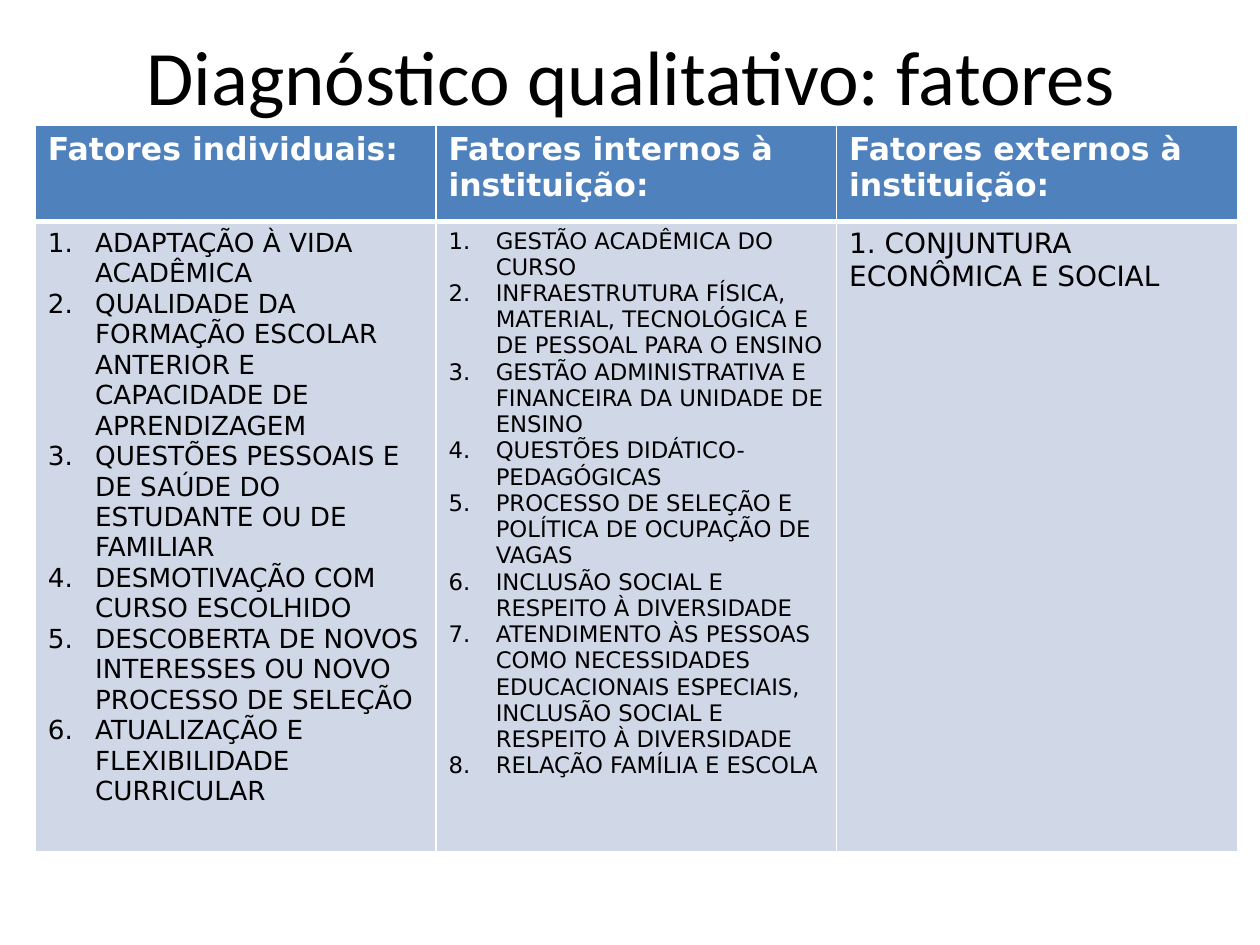
"""Builds a slide with a three-column table of qualitative factors."""
import dataclasses

import lxml.etree
import pptx
import pptx.dml.color
import pptx.enum.text
import pptx.oxml.ns
import pptx.table
import pptx.text.text
import pptx.util

WIDE, HIGH = 10, 7.5
COLS = 3
COL = 3.18
ROWS = (0.77, 5)
LEFT, TOP = 0.028 * WIDE, 0.132 * HIGH
HANG = 0.375
HUES = {"head": "4F81BD", "body": "D0D8E8", "white": "FFFFFF", "black": "000000"}
FACE = "DejaVu Sans"


@dataclasses.dataclass(frozen=True)
class Style:
    size: float
    hue: str
    bold: bool = False
    face: str = FACE


@dataclasses.dataclass(frozen=True)
class Factor:
    title: str
    size: float
    items: tuple[str, ...]
    listed: bool = True


FACTORS = (
    Factor("Fatores individuais:", 15, (
        "ADAPTAÇÃO À VIDA ACADÊMICA",
        "QUALIDADE DA FORMAÇÃO ESCOLAR ANTERIOR E CAPACIDADE DE APRENDIZAGEM",
        "QUESTÕES PESSOAIS E DE SAÚDE DO ESTUDANTE OU DE FAMILIAR",
        "DESMOTIVAÇÃO COM CURSO ESCOLHIDO",
        "DESCOBERTA DE NOVOS INTERESSES OU NOVO PROCESSO DE SELEÇÃO",
        "ATUALIZAÇÃO E FLEXIBILIDADE CURRICULAR",
    )),
    Factor("Fatores internos à instituição:", 13, (
        "GESTÃO ACADÊMICA DO CURSO",
        "INFRAESTRUTURA FÍSICA, MATERIAL, TECNOLÓGICA E DE PESSOAL PARA O ENSINO",
        "GESTÃO ADMINISTRATIVA E FINANCEIRA DA UNIDADE DE ENSINO",
        "QUESTÕES DIDÁTICO-PEDAGÓGICAS",
        "PROCESSO DE SELEÇÃO E POLÍTICA DE OCUPAÇÃO DE VAGAS",
        "INCLUSÃO SOCIAL E RESPEITO À DIVERSIDADE",
        "ATENDIMENTO ÀS PESSOAS COMO NECESSIDADES EDUCACIONAIS ESPECIAIS, "
        "INCLUSÃO SOCIAL E RESPEITO À DIVERSIDADE",
        "RELAÇÃO FAMÍLIA E ESCOLA",
    )),
    Factor("Fatores externos à instituição:", 16,
           ("1. CONJUNTURA ECONÔMICA E SOCIAL",), False),
)


def tint(name: str) -> pptx.dml.color.RGBColor:
    return pptx.dml.color.RGBColor.from_string(HUES[name])


def write(para: pptx.text.text._Paragraph, text: str, style: Style) -> None:
    run = para.add_run()
    run.text = text
    run.font.name = style.face
    run.font.size = pptx.util.Pt(style.size)
    run.font.bold = style.bold
    run.font.color.rgb = tint(style.hue)


def number(para: pptx.text.text._Paragraph) -> None:
    props = para._p.get_or_add_pPr()
    hang = pptx.util.Inches(HANG)
    props.set("marL", str(hang))
    props.set("indent", str(-hang))
    mark = lxml.etree.SubElement(props, pptx.oxml.ns.qn("a:buAutoNum"))
    mark.set("type", "arabicPeriod")


def border(cell: pptx.table._Cell, edges: dict[str, float]) -> None:
    props = cell._tc.get_or_add_tcPr()
    for spot, (side, width) in enumerate(edges.items()):
        line = lxml.etree.Element(pptx.oxml.ns.qn(f"a:ln{side}"))
        line.set("w", str(pptx.util.Pt(width)))
        fill = lxml.etree.SubElement(line, pptx.oxml.ns.qn("a:solidFill"))
        hue = lxml.etree.SubElement(fill, pptx.oxml.ns.qn("a:srgbClr"))
        hue.set("val", HUES["white"])
        props.insert(spot, line)


def fill_cell(cell: pptx.table._Cell, hue: str, items: tuple[str, ...],
              style: Style, edges: dict[str, float], listed: bool) -> None:
    cell.fill.solid()
    cell.fill.fore_color.rgb = tint(hue)
    border(cell, edges)
    frame = cell.text_frame
    for rank, text in enumerate(items):
        para = frame.add_paragraph() if rank else frame.paragraphs[0]
        if listed:
            number(para)
        write(para, text, style)


def add_title(slide: pptx.slide.Slide, text: str) -> None:
    box = slide.shapes.add_textbox(*map(
        pptx.util.Inches, (0.051 * WIDE, -0.004 * HIGH, 0.9 * WIDE, HIGH / 6)))
    frame = box.text_frame
    frame.word_wrap = True
    frame.vertical_anchor = pptx.enum.text.MSO_ANCHOR.MIDDLE
    para = frame.paragraphs[0]
    para.alignment = pptx.enum.text.PP_ALIGN.CENTER
    write(para, text, Style(44, "black", face="Calibri"))


def add_grid(slide: pptx.slide.Slide) -> None:
    size = (LEFT, TOP, COLS * COL, sum(ROWS))
    table = slide.shapes.add_table(
        len(ROWS), COLS, *map(pptx.util.Inches, size)).table
    for row, height in zip(table.rows, ROWS):
        row.height = pptx.util.Inches(height)
    thin = dict.fromkeys("LRTB", 1)
    for col, factor in enumerate(FACTORS):
        table.columns[col].width = pptx.util.Inches(COL)
        fill_cell(table.cell(0, col), "head", (factor.title,),
                  Style(18, "white", True), thin | {"B": 3}, False)
        fill_cell(table.cell(1, col), "body", factor.items,
                  Style(factor.size, "black"), thin | {"T": 3}, factor.listed)


def main() -> None:
    deck = pptx.Presentation()
    deck.slide_width = pptx.util.Inches(WIDE)
    deck.slide_height = pptx.util.Inches(HIGH)
    slide = deck.slides.add_slide(deck.slide_layouts[6])
    add_title(slide, "Diagnóstico qualitativo: fatores")
    add_grid(slide)
    deck.save("out.pptx")


if __name__ == "__main__":
    main()
